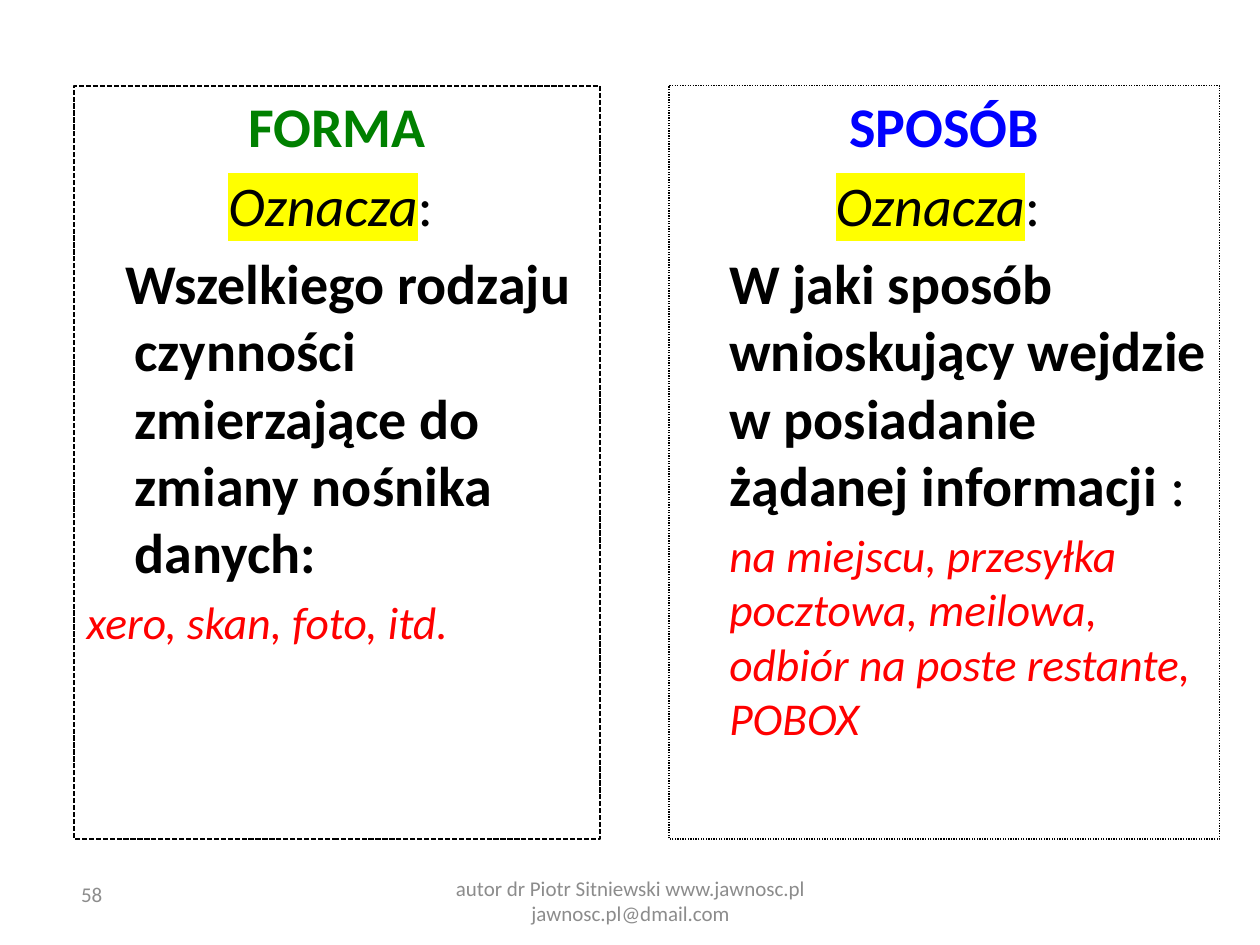
from dataclasses import dataclass

from lxml import etree
from pptx import Presentation
from pptx import util as u
from pptx.dml.color import RGBColor
from pptx.enum import dml, shapes, text
from pptx.oxml.ns import qn

FONT = "Calibri"
COLORS = {
    "black": "000000",
    "green": "008000",
    "blue": "0000FF",
    "red": "FF0000",
    "yellow": "FFFF00",
    "gray": "8C8C8C",
}
ALIGN = text.PP_ALIGN


@dataclass
class Span:
    text: str
    color: str = "black"
    size: int = 32
    bold: bool = False
    italic: bool = False
    highlight: str = ""


@dataclass
class Line:
    spans: list[Span]
    align: ALIGN = ALIGN.LEFT
    margin: float = 0
    indent: float = 0
    space_ratio: float = 0.2


@dataclass
class Panel:
    left: float
    width: float
    line_width: float
    dash: dml.MSO_LINE
    title: Span
    body: list[Line]


@dataclass
class Footer:
    left: float
    top: float
    width: float
    height: float
    text: str
    align: ALIGN


def rgb(name: str) -> RGBColor:
    return RGBColor.from_string(COLORS[name])


def add_span(paragraph, span: Span) -> None:
    run = paragraph.add_run()
    run.text = span.text
    font = run.font
    font.name, font.size = FONT, u.Pt(span.size)
    font.bold, font.italic = span.bold, span.italic
    font.color.rgb = rgb(span.color)
    if span.highlight:
        highlight = etree.Element(qn("a:highlight"))
        etree.SubElement(highlight, qn("a:srgbClr"), val=COLORS[span.highlight])
        run._r.rPr.find(qn("a:solidFill")).addnext(highlight)


def write_lines(frame, lines: list[Line]) -> None:
    frame.word_wrap = True
    for index, line in enumerate(lines):
        paragraph = frame.add_paragraph() if index else frame.paragraphs[0]
        paragraph.alignment = line.align
        paragraph.space_before = u.Pt(line.spans[0].size * line.space_ratio)
        properties = paragraph._p.get_or_add_pPr()
        properties.set("marL", str(u.Inches(line.margin)))
        properties.set("indent", str(u.Inches(line.indent)))
        for span in line.spans:
            add_span(paragraph, span)


def add_panel(slide, panel: Panel) -> None:
    shape = slide.shapes.add_shape(
        shapes.MSO_SHAPE.RECTANGLE, u.Inches(panel.left), u.Inches(0.68),
        u.Inches(panel.width), u.Inches(5.98))
    shape.shadow.inherit = False
    shape.fill.background()
    shape.line.color.rgb = rgb("black")
    shape.line.width = u.Pt(panel.line_width)
    shape.line.dash_style = panel.dash
    shape.text_frame.vertical_anchor = text.MSO_ANCHOR.TOP
    meaning = [Span("Oznacza", italic=True, highlight="yellow"), Span(": ")]
    heading = [Line([panel.title], ALIGN.CENTER), Line(meaning, ALIGN.CENTER)]
    write_lines(shape.text_frame, heading + panel.body)


def add_footer(slide, footer: Footer) -> None:
    box = slide.shapes.add_textbox(
        u.Inches(footer.left), u.Inches(footer.top),
        u.Inches(footer.width), u.Inches(footer.height))
    box.text_frame.vertical_anchor = text.MSO_ANCHOR.MIDDLE
    span = Span(footer.text, "gray", 12)
    write_lines(box.text_frame, [Line([span], footer.align, space_ratio=0)])


PANELS = [
    Panel(0.59, 4.17, 1, dml.MSO_LINE.SQUARE_DOT,
          Span("FORMA", "green", bold=True), [
              Line([Span("Wszelkiego rodzaju czynności zmierzające do "
                         "zmiany nośnika danych:", bold=True)],
                   margin=0.38, indent=-0.07),
              Line([Span("xero, skan, foto, itd.", "red", 26, italic=True)],
                   margin=0.38, indent=-0.38),
          ]),
    Panel(5.31, 4.37, 0.75, dml.MSO_LINE.ROUND_DOT,
          Span("SPOSÓB", "blue", bold=True), [
              Line([Span("W jaki sposób wnioskujący wejdzie w posiadanie "
                         "żądanej informacji ", bold=True), Span(":")],
                   margin=0.38),
              Line([Span("na miejscu, przesyłka pocztowa, meilowa, odbiór na "
                         "poste restante, POBOX", "red", 26, italic=True)],
                   margin=0.38),
          ]),
]
FOOTERS = [
    Footer(0.2, 6.9, 0.71, 0.39, "58", ALIGN.RIGHT),
    Footer(3.42, 6.95, 3.17, 0.4,
           "autor dr Piotr Sitniewski www.jawnosc.pl jawnosc.pl@dmail.com",
           ALIGN.CENTER),
]


def main() -> None:
    presentation = Presentation()
    presentation.slide_width = u.Inches(10)
    presentation.slide_height = u.Inches(7.5)
    slide = presentation.slides.add_slide(presentation.slide_layouts[6])
    # Two framed definitions
    for panel in PANELS:
        add_panel(slide, panel)
    # Slide number and author
    for footer in FOOTERS:
        add_footer(slide, footer)
    presentation.save("out.pptx")


if __name__ == "__main__":
    main()
